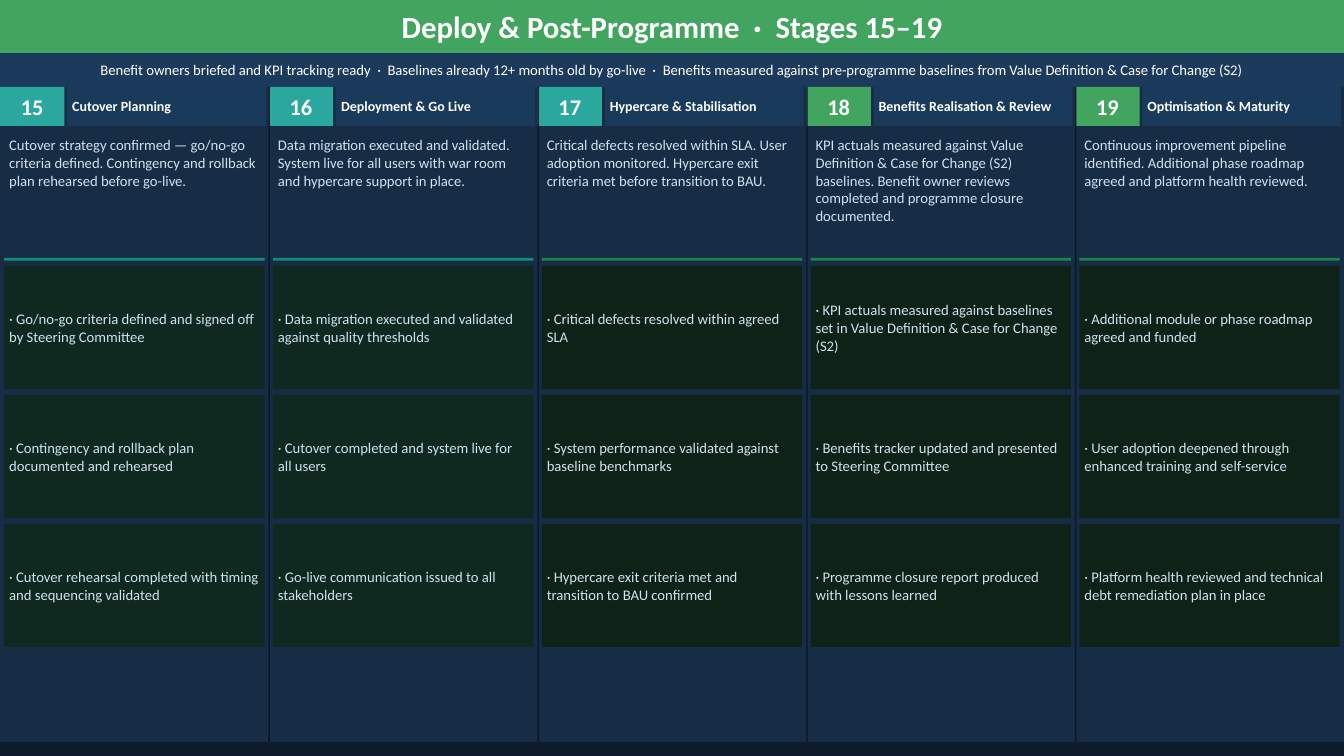
"""Build the Deploy & Post-Programme slide covering stages 15 to 19."""
from dataclasses import dataclass

import pptx
import pptx.dml.color
import pptx.enum.shapes
import pptx.enum.text
import pptx.util
from pptx.util import Pt

ALIGN = pptx.enum.text.PP_ALIGN
ANCHOR = pptx.enum.text.MSO_ANCHOR


@dataclass(frozen=True)
class Theme:
    font: str = "Calibri"
    background: str = "0D2137"
    subtitle_band: str = "1B3A5C"
    footer: str = "0D1B2A"
    column: str = "162D45"
    stage_title: str = "1A3A5C"
    divider: str = "0A1628"
    white: str = "FFFFFF"
    body_text: str = "D4E1F0"
    teal: str = "2BA89D"
    green: str = "42A55F"
    teal_rule: str = "138D75"
    green_rule: str = "1E8449"
    teal_card: str = "0F2820"
    green_card: str = "0F2218"
    title_size: float = 22
    number_size: float = 16
    stage_size: float = 10
    body_size: float = 10.5


THEME = Theme()


@dataclass(frozen=True)
class Box:
    left: float
    top: float
    width: float
    height: float


@dataclass(frozen=True)
class Palette:
    badge: str
    rule: str
    card: str


@dataclass(frozen=True)
class Stage:
    number: int
    title: str
    summary: str
    outcomes: tuple[str, ...]
    palette: Palette


CUTOVER = Palette(THEME.teal, THEME.teal_rule, THEME.teal_card)
HYPERCARE = Palette(THEME.teal, THEME.green_rule, THEME.green_card)
BENEFITS = Palette(THEME.green, THEME.green_rule, THEME.green_card)

STAGES = (
    Stage(15, "Cutover Planning",
          "Cutover strategy confirmed — go/no-go criteria defined. Contingency and rollback plan "
          "rehearsed before go-live.",
          ("Go/no-go criteria defined and signed off by Steering Committee",
           "Contingency and rollback plan documented and rehearsed",
           "Cutover rehearsal completed with timing and sequencing validated"), CUTOVER),
    Stage(16, "Deployment & Go Live",
          "Data migration executed and validated. System live for all users with war room and "
          "hypercare support in place.",
          ("Data migration executed and validated against quality thresholds",
           "Cutover completed and system live for all users",
           "Go-live communication issued to all stakeholders"), CUTOVER),
    Stage(17, "Hypercare & Stabilisation",
          "Critical defects resolved within SLA. User adoption monitored. Hypercare exit criteria "
          "met before transition to BAU.",
          ("Critical defects resolved within agreed SLA",
           "System performance validated against baseline benchmarks",
           "Hypercare exit criteria met and transition to BAU confirmed"), HYPERCARE),
    Stage(18, "Benefits Realisation & Review",
          "KPI actuals measured against Value Definition & Case for Change (S2) baselines. Benefit "
          "owner reviews completed and programme closure documented.",
          ("KPI actuals measured against baselines set in Value Definition & Case for Change (S2)",
           "Benefits tracker updated and presented to Steering Committee",
           "Programme closure report produced with lessons learned"), BENEFITS),
    Stage(19, "Optimisation & Maturity",
          "Continuous improvement pipeline identified. Additional phase roadmap agreed and platform "
          "health reviewed.",
          ("Additional module or phase roadmap agreed and funded",
           "User adoption deepened through enhanced training and self-service",
           "Platform health reviewed and technical debt remediation plan in place"), BENEFITS),
)

SLIDE_WIDTH, SLIDE_HEIGHT = 960, 540
COLUMN_WIDTH = SLIDE_WIDTH / len(STAGES)
COLUMN_TOP, COLUMN_HEIGHT = 62, 468
CARD_TOP, CARD_HEIGHT, CARD_PITCH = 190, 88, 92.1
CARD_MARGIN, CARD_WIDTH = 3, 186


def color(value: str) -> pptx.dml.color.RGBColor:
    """Return the colour for a hexadecimal value."""
    return pptx.dml.color.RGBColor.from_string(value)


def add_rectangle(slide, box: Box, fill: str):
    """Draw a plain filled rectangle without line or shadow."""
    shape = slide.shapes.add_shape(
        pptx.enum.shapes.MSO_SHAPE.RECTANGLE,
        Pt(box.left), Pt(box.top), Pt(box.width), Pt(box.height))
    shape.shadow.inherit = False
    shape.fill.solid()
    shape.fill.fore_color.rgb = color(fill)
    shape.line.fill.background()
    return shape


def write_text(shape, text: str, *, size: float = THEME.body_size, font_color: str = THEME.body_text,
               bold: bool = False, alignment=ALIGN.LEFT, anchor=ANCHOR.MIDDLE) -> None:
    """Write one formatted paragraph into a shape."""
    frame = shape.text_frame
    frame.word_wrap = True
    frame.vertical_anchor = anchor
    frame.margin_left = frame.margin_right = Pt(3.6)
    frame.margin_top = frame.margin_bottom = Pt(2.9)
    paragraph = frame.paragraphs[0]
    paragraph.alignment = alignment
    run = paragraph.add_run()
    run.text = text
    run.font.name = THEME.font
    run.font.size = Pt(size)
    run.font.bold = bold
    run.font.color.rgb = color(font_color)


def draw_stage(slide, stage: Stage, left: float) -> None:
    """Draw one stage column with its heading, summary and outcome cards."""
    add_rectangle(slide, Box(left, COLUMN_TOP, COLUMN_WIDTH, COLUMN_HEIGHT), THEME.column)
    badge = add_rectangle(slide, Box(left, COLUMN_TOP, 46, 28), stage.palette.badge)
    write_text(badge, str(stage.number), size=THEME.number_size, font_color=THEME.white,
               bold=True, alignment=ALIGN.CENTER)
    heading = add_rectangle(slide, Box(left + 48, COLUMN_TOP, 142, 28), THEME.stage_title)
    write_text(heading, stage.title, size=THEME.stage_size, font_color=THEME.white, bold=True)

    inner_left = left + CARD_MARGIN
    summary = slide.shapes.add_textbox(Pt(inner_left), Pt(94.3), Pt(CARD_WIDTH), Pt(90))
    write_text(summary, stage.summary, anchor=ANCHOR.TOP)
    add_rectangle(slide, Box(inner_left, 184.2, CARD_WIDTH, 2), stage.palette.rule)
    for row, outcome in enumerate(stage.outcomes):
        card_box = Box(inner_left, CARD_TOP + row * CARD_PITCH, CARD_WIDTH, CARD_HEIGHT)
        write_text(add_rectangle(slide, card_box, stage.palette.card), f"· {outcome}")


def main() -> None:
    """Build and save the presentation."""
    presentation = pptx.Presentation()
    presentation.slide_width = Pt(SLIDE_WIDTH)
    presentation.slide_height = Pt(SLIDE_HEIGHT)
    slide = presentation.slides.add_slide(presentation.slide_layouts[6])
    slide.background.fill.solid()
    slide.background.fill.fore_color.rgb = color(THEME.background)

    title = add_rectangle(slide, Box(0, 0, SLIDE_WIDTH, 38), THEME.green)
    write_text(title, "Deploy & Post-Programme  ·  Stages 15–19", size=THEME.title_size,
               font_color=THEME.white, bold=True, alignment=ALIGN.CENTER)
    subtitle = add_rectangle(slide, Box(0, 38, SLIDE_WIDTH, 24), THEME.subtitle_band)
    write_text(subtitle,
               "Benefit owners briefed and KPI tracking ready  ·  Baselines already 12+ months old "
               "by go-live  ·  Benefits measured against pre-programme baselines from Value "
               "Definition & Case for Change (S2)",
               font_color=THEME.white, alignment=ALIGN.CENTER)
    add_rectangle(slide, Box(0, 530, SLIDE_WIDTH, 10), THEME.footer)

    for index, stage in enumerate(STAGES):
        draw_stage(slide, stage, index * COLUMN_WIDTH)
    for index in range(1, len(STAGES)):
        add_rectangle(slide, Box(index * COLUMN_WIDTH, COLUMN_TOP, 0.9, COLUMN_HEIGHT), THEME.divider)
    presentation.save("out.pptx")


if __name__ == "__main__":
    main()
